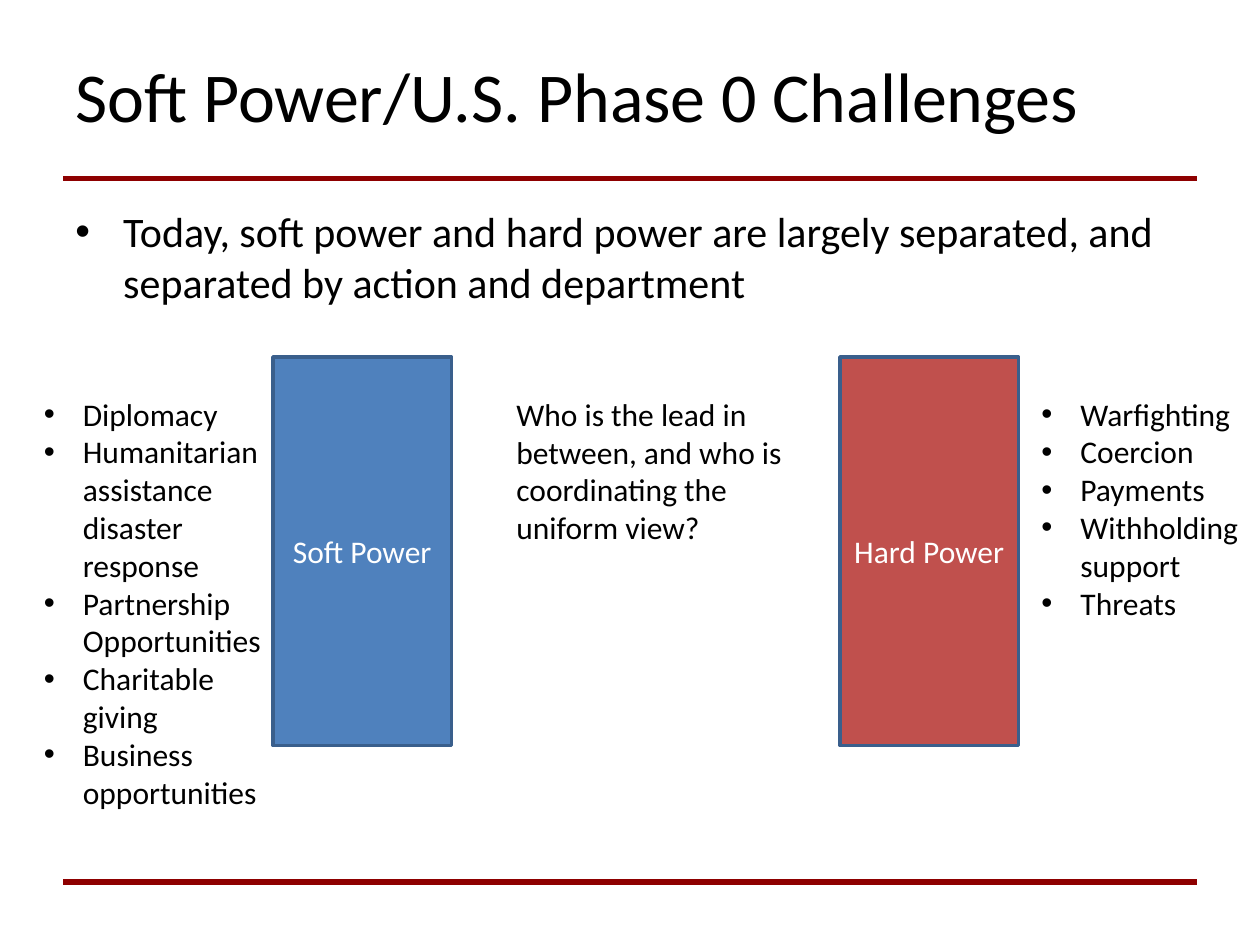
from dataclasses import dataclass

from lxml import etree
from pptx import Presentation
from pptx.dml.color import RGBColor
from pptx.enum.shapes import MSO_CONNECTOR, MSO_SHAPE
from pptx.enum.text import MSO_ANCHOR, MSO_AUTO_SIZE, PP_ALIGN
from pptx.oxml.ns import qn
from pptx.util import Inches, Pt

LEFT, CENTER = PP_ALIGN.LEFT, PP_ALIGN.CENTER
TOP, MIDDLE = MSO_ANCHOR.TOP, MSO_ANCHOR.MIDDLE
NO_FIT = MSO_AUTO_SIZE.NONE
RECT, LINE = MSO_SHAPE.RECTANGLE, MSO_CONNECTOR.STRAIGHT

COLS, ROWS = 120, 90  # square cells, twelve to the inch


@dataclass(frozen=True)
class Theme:
    font: str = "Calibri"
    ink: str = "000000"
    light: str = "FFFFFF"
    rule: str = "8E0000"
    edge: str = "3A5F8C"
    soft: str = "4F81BD"
    hard: str = "C0504D"
    title: int = 40
    lead: int = 24
    note: int = 18


def color(code):
    return RGBColor.from_string(code)


def write(frame, lines, *, font, size, ink, align=LEFT, anchor=TOP,
          indent=0, before=0):
    """Fill a text frame; a non-zero indent (inches) adds hanging bullets."""
    frame.word_wrap = True
    frame.auto_size = NO_FIT
    frame.vertical_anchor = anchor
    for i, line in enumerate(lines):
        para = frame.add_paragraph() if i else frame.paragraphs[0]
        para.alignment = align
        para.space_before = Pt(before)
        run = para.add_run()
        run.text = line
        run.font.name = font
        run.font.size = Pt(size)
        run.font.color.rgb = color(ink)
        if indent:
            props = para._p.get_or_add_pPr()
            props.set("marL", str(Inches(indent)))
            props.set("indent", str(-Inches(indent)))
            etree.SubElement(props, qn("a:buFont"), typeface="Arial")
            etree.SubElement(props, qn("a:buChar"), char="•")


class Deck:
    """Holds the theme and the current slide; lengths are grid cells."""

    def __init__(self, theme):
        self.theme = theme
        self.file = Presentation()
        self.file.slide_width = Inches(10)
        self.file.slide_height = Inches(7.5)
        self.slide = self.file.slides.add_slide(self.file.slide_layouts[5])

    def place(self, col, row, wide, high):
        across = self.file.slide_width / COLS
        down = self.file.slide_height / ROWS
        return [round(n) for n in
                (col * across, row * down, wide * across, high * down)]

    def title(self, text, *cells):
        head = self.slide.shapes.title
        head.left, head.top, head.width, head.height = self.place(*cells)
        write(head.text_frame, [text], font=self.theme.font,
              size=self.theme.title, ink=self.theme.ink, anchor=MIDDLE)

    def rule(self, row):
        x, y, wide, _ = self.place(6, row, 108, 0)
        line = self.slide.shapes.add_connector(LINE, x, y, x + wide, y)
        line.line.color.rgb = color(self.theme.rule)
        line.line.width = Pt(3)
        etree.SubElement(line._element.spPr, qn("a:effectLst"))

    def text(self, lines, *cells, size=None, **style):
        box = self.slide.shapes.add_textbox(*self.place(*cells))
        write(box.text_frame, lines, font=self.theme.font,
              size=size or self.theme.note, ink=self.theme.ink, **style)

    def block(self, text, col, fill):
        box = self.slide.shapes.add_shape(RECT, *self.place(col, 34, 17, 37))
        box.shadow.inherit = False
        box.fill.solid()
        box.fill.fore_color.rgb = color(fill)
        box.line.color.rgb = color(self.theme.edge)
        box.line.width = Pt(2)
        write(box.text_frame, [text], font=self.theme.font,
              size=self.theme.note, ink=self.theme.light,
              align=CENTER, anchor=MIDDLE)


def main():
    theme = Theme()
    deck = Deck(theme)
    for row in (17, 84):
        deck.rule(row)
    deck.title("Soft Power/U.S. Phase 0 Challenges", 6, 1, 101, 16)
    deck.text(["Today, soft power and hard power are largely separated, "
               "and separated by action and department"],
              6, 19, 108, 61.5, size=theme.lead, indent=0.38, before=4.8)
    deck.block("Soft Power", 26, theme.soft)
    deck.block("Hard Power", 80, theme.hard)
    deck.text(["Warfighting", "Coercion", "Payments",
               "Withholding support", "Threats"],
              98, 37, 22, 23, indent=0.31)
    deck.text(["Diplomacy", "Humanitarian assistance disaster response",
               "Partnership Opportunities", "Charitable giving",
               "Business opportunities"],
              3, 37, 24, 41, indent=0.31)
    deck.text(["Who is the lead in between, and who is coordinating "
               "the uniform view?"], 48, 37, 28, 16)
    deck.file.save("out.pptx")


if __name__ == "__main__":
    main()
